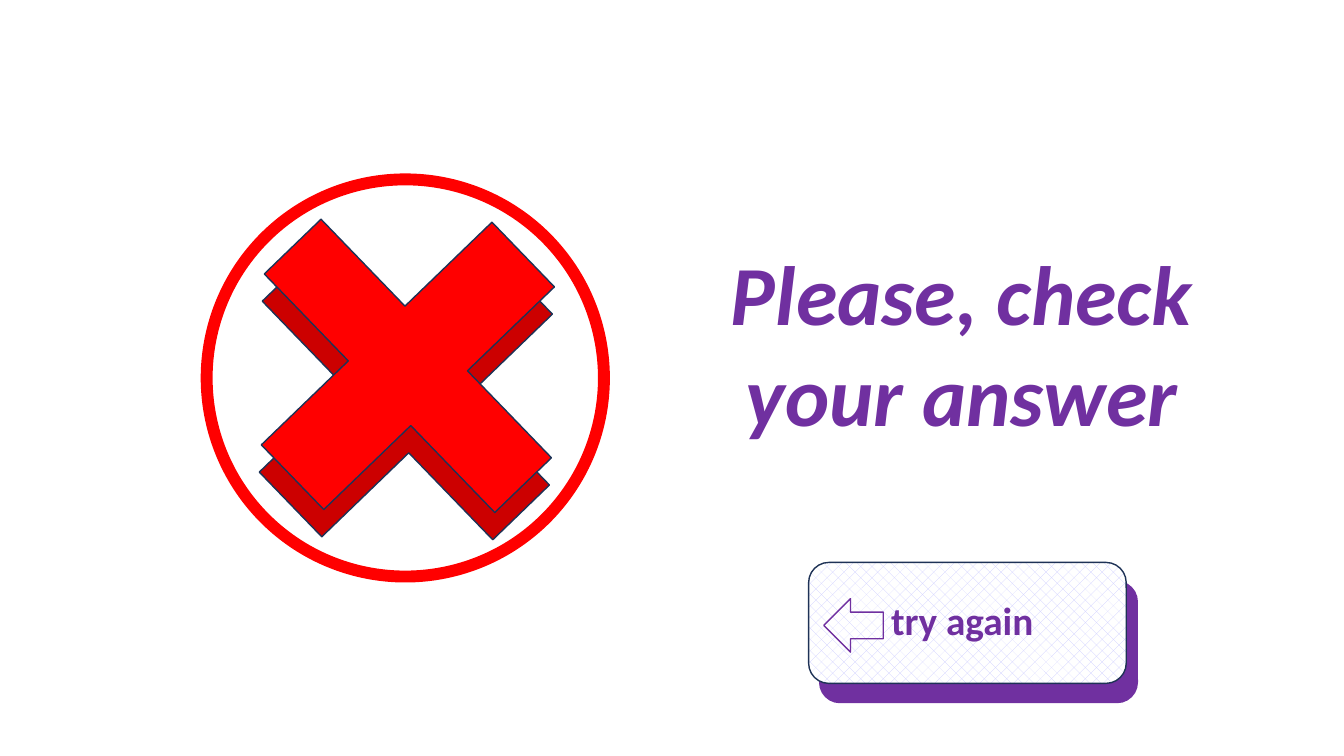
from pptx import Presentation
from pptx.dml.color import RGBColor
from pptx.enum.dml import MSO_PATTERN
from pptx.enum.shapes import MSO_SHAPE as Shape
from pptx.enum.text import MSO_ANCHOR as Anchor, PP_ALIGN as Align
from pptx.util import Inches, Pt

COLORS = {
    "purple": "7030A0",
    "lavender": "CCCCFF",
    "red": "FF0000",
    "dark red": "CC0000",
    "navy": "1E3256",
    "white": "FFFFFF",
}


def color(name):
    return RGBColor.from_string(COLORS[name])


class SlideBuilder:
    """Holds the text style and the page that the elements are added to."""

    font_name = "Calibri"
    text_color = "purple"

    def __init__(self, page):
        self.page = page

    def shape(self, kind, left, top, width, height, line, fill=None, weight=1, rotation=0):
        item = self.page.shapes.add_shape(
            kind, Inches(left), Inches(top), Inches(width), Inches(height))
        item.shadow.inherit = False
        item.rotation = rotation
        if fill:
            item.fill.solid()
            item.fill.fore_color.rgb = color(fill)
        else:
            item.fill.background()
        item.line.color.rgb = color(line)
        item.line.width = Pt(weight)
        return item

    def cross(self, left, top, fill):
        item = self.shape(Shape.CROSS, left, top, 3.29, 3.18, "navy", fill, rotation=46)
        item.adjustments[0] = 0.377

    def style(self, para, size, align, italic=None):
        para.alignment = align
        font = para.font
        font.name, font.size = self.font_name, Pt(size)
        font.bold, font.italic = True, italic
        font.color.rgb = color(self.text_color)

    def heading(self, left, top, width, height, lines):
        box = self.page.shapes.add_textbox(
            Inches(left), Inches(top), Inches(width), Inches(height))
        frame = box.text_frame
        frame.word_wrap = True
        frame.text = "\n".join(lines)
        for para in frame.paragraphs:
            self.style(para, 60, Align.CENTER, italic=True)

    def button(self, left, top, width, height, label):
        """Add a patterned button with a solid block behind it and a back arrow."""
        self.shape(Shape.ROUNDED_RECTANGLE, left + 0.11, top + 0.19, width, height,
                   "purple", "purple")
        face = self.shape(Shape.ROUNDED_RECTANGLE, left, top, width, height, "navy")
        face.fill.patterned()
        face.fill.pattern = MSO_PATTERN.PERCENT_25
        face.fill.fore_color.rgb = color("lavender")
        face.fill.back_color.rgb = color("white")
        frame = face.text_frame
        frame.vertical_anchor = Anchor.MIDDLE
        frame.margin_left = Inches(0.76)
        frame.text = label
        para = frame.paragraphs[0]
        para.line_spacing = 0.9
        para.space_before = Pt(10)
        self.style(para, 28, Align.LEFT)
        self.shape(Shape.LEFT_ARROW, left + 0.15, top + 0.36, 0.59, 0.53, "purple")


def main():
    deck = Presentation()
    deck.slide_width, deck.slide_height = Inches(13.33), Inches(7.5)
    builder = SlideBuilder(deck.slides.add_slide(deck.slide_layouts[6]))

    builder.heading(7.03, 2.35, 5.01, 2.12, ["Please, check", "your answer"])
    builder.shape(Shape.FLOWCHART_CONNECTOR, 2.05, 1.78, 3.94, 3.94, "red", weight=8.5)
    builder.cross(2.38, 2.31, "dark red")
    builder.cross(2.4, 2.04, "red")
    builder.button(8.02, 5.58, 3.15, 1.2, "try again")

    deck.save("out.pptx")


if __name__ == "__main__":
    main()
